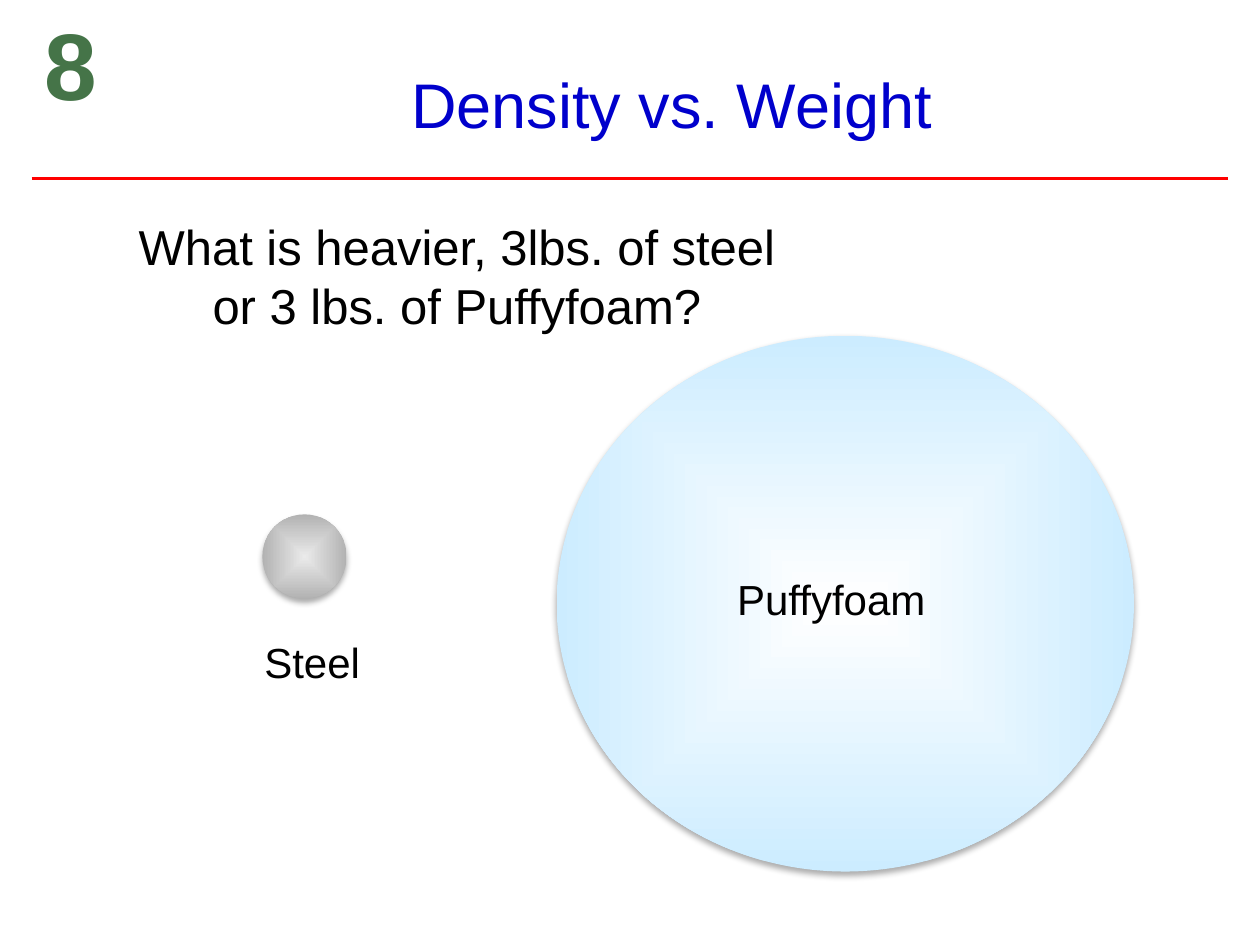
from dataclasses import dataclass

from lxml import etree
from pptx import Presentation
from pptx.dml.color import RGBColor
from pptx.enum import shapes, text
from pptx.oxml import ns, parse_xml
from pptx.util import Cm, Pt


@dataclass(frozen=True)
class Theme:
    font: str = "Arial"
    title: str = "0000CC"
    body: str = "000000"
    rule: str = "FF0000"
    number: str = "457448"
    shadow: str = "000000"
    title_size: int = 36
    question_size: int = 28
    label_size: int = 24
    number_size: int = 54


@dataclass(frozen=True)
class Box:
    left: float
    top: float
    width: float
    height: float

    def lengths(self) -> tuple:
        return Cm(self.left), Cm(self.top), Cm(self.width), Cm(self.height)


@dataclass(frozen=True)
class Ball:
    box: Box
    centre: str
    edge: str


@dataclass(frozen=True)
class Caption:
    words: str
    box: Box
    size: int
    color: str = Theme.body
    align: text.PP_ALIGN = text.PP_ALIGN.LEFT
    bold: bool = False
    wrap: bool = False
    side_inset: float = 0.25


THEME = Theme()

BALLS = [
    Ball(Box(11.22, 6.77, 11.64, 10.8), "FFFFFF", "CCECFF"),
    Ball(Box(5.29, 10.37, 1.7, 1.7), "EAEAEA", "B2B2B2"),
]

CAPTIONS = [
    Caption("Puffyfoam", Box(14.61, 11.43, 4.37, 1.27), THEME.label_size),
    Caption("Steel", Box(5.08, 12.7, 2.46, 1.27), THEME.label_size),
    Caption("What is heavier, 3lbs. of steel or 3 lbs. of Puffyfoam?",
            Box(2.54, 4.24, 13.34, 2.64), THEME.question_size,
            align=text.PP_ALIGN.CENTER, wrap=True, side_inset=0.2),
    Caption("8", Box(0.64, 0, 1.57, 2.57), THEME.number_size, THEME.number,
            text.PP_ALIGN.CENTER, bold=True),
]


def write(p, words: str, size: int, color: str, bold: bool = False) -> None:
    r = p.add_run()
    r.text = words
    r.font.name = THEME.font
    r.font.size = Pt(size)
    r.font.bold = bold
    r.font.color.rgb = RGBColor.from_string(color)


def add_title(s, words: str, box: Box) -> None:
    sp = s.shapes.title
    sp.left, sp.top, sp.width, sp.height = box.lengths()
    tf = sp.text_frame
    tf.auto_size = text.MSO_AUTO_SIZE.NONE
    tf.vertical_anchor = text.MSO_ANCHOR.BOTTOM
    p = tf.paragraphs[0]
    p.alignment = text.PP_ALIGN.LEFT
    write(p, words, THEME.title_size, THEME.title)


def add_rule(s, left: float, right: float, y: float) -> None:
    line = s.shapes.add_connector(
        shapes.MSO_CONNECTOR.STRAIGHT, Cm(left), Cm(y), Cm(right), Cm(y))
    line.line.color.rgb = RGBColor.from_string(THEME.rule)
    line.line.width = Pt(1.5)
    etree.SubElement(line._element.spPr, ns.qn("a:effectLst"))


def add_ball(s, ball: Ball) -> None:
    sp = s.shapes.add_shape(shapes.MSO_SHAPE.OVAL, *ball.box.lengths())
    sp.line.fill.background()
    sp.shadow.inherit = False
    props = sp._element.spPr
    props.find(ns.qn("a:prstGeom")).addnext(parse_xml(
        f'<a:gradFill {ns.nsdecls("a")} rotWithShape="1"><a:gsLst>'
        f'<a:gs pos="0"><a:srgbClr val="{ball.centre}"/></a:gs>'
        f'<a:gs pos="100000"><a:srgbClr val="{ball.edge}"/></a:gs></a:gsLst>'
        '<a:path path="shape"><a:fillToRect l="50000" t="50000" r="50000" b="50000"/>'
        '</a:path></a:gradFill>'))
    props.find(ns.qn("a:effectLst")).append(parse_xml(
        f'<a:outerShdw {ns.nsdecls("a")} blurRad="{Pt(3.5)}" dist="{Pt(2.2)}" '
        f'dir="5400000" rotWithShape="0"><a:srgbClr val="{THEME.shadow}">'
        '<a:alpha val="32000"/></a:srgbClr></a:outerShdw>'))


def add_caption(s, caption: Caption) -> None:
    tf = s.shapes.add_textbox(*caption.box.lengths()).text_frame
    tf.word_wrap = caption.wrap
    tf.auto_size = text.MSO_AUTO_SIZE.SHAPE_TO_FIT_TEXT
    tf.margin_left = tf.margin_right = Cm(caption.side_inset)
    p = tf.paragraphs[0]
    p.alignment = caption.align
    write(p, caption.words, caption.size, caption.color, caption.bold)


def main() -> None:
    prs = Presentation()
    prs.slide_width, prs.slide_height = Cm(25.4), Cm(19.05)
    s = prs.slides.add_slide(prs.slide_layouts[5])
    add_rule(s, 0.64, 24.76, 3.6)
    add_title(s, "Density vs. Weight", Box(8.04, 0.85, 11.64, 2.12))
    for ball in BALLS:
        add_ball(s, ball)
    for caption in CAPTIONS:
        add_caption(s, caption)
    prs.save("out.pptx")


if __name__ == "__main__":
    main()
